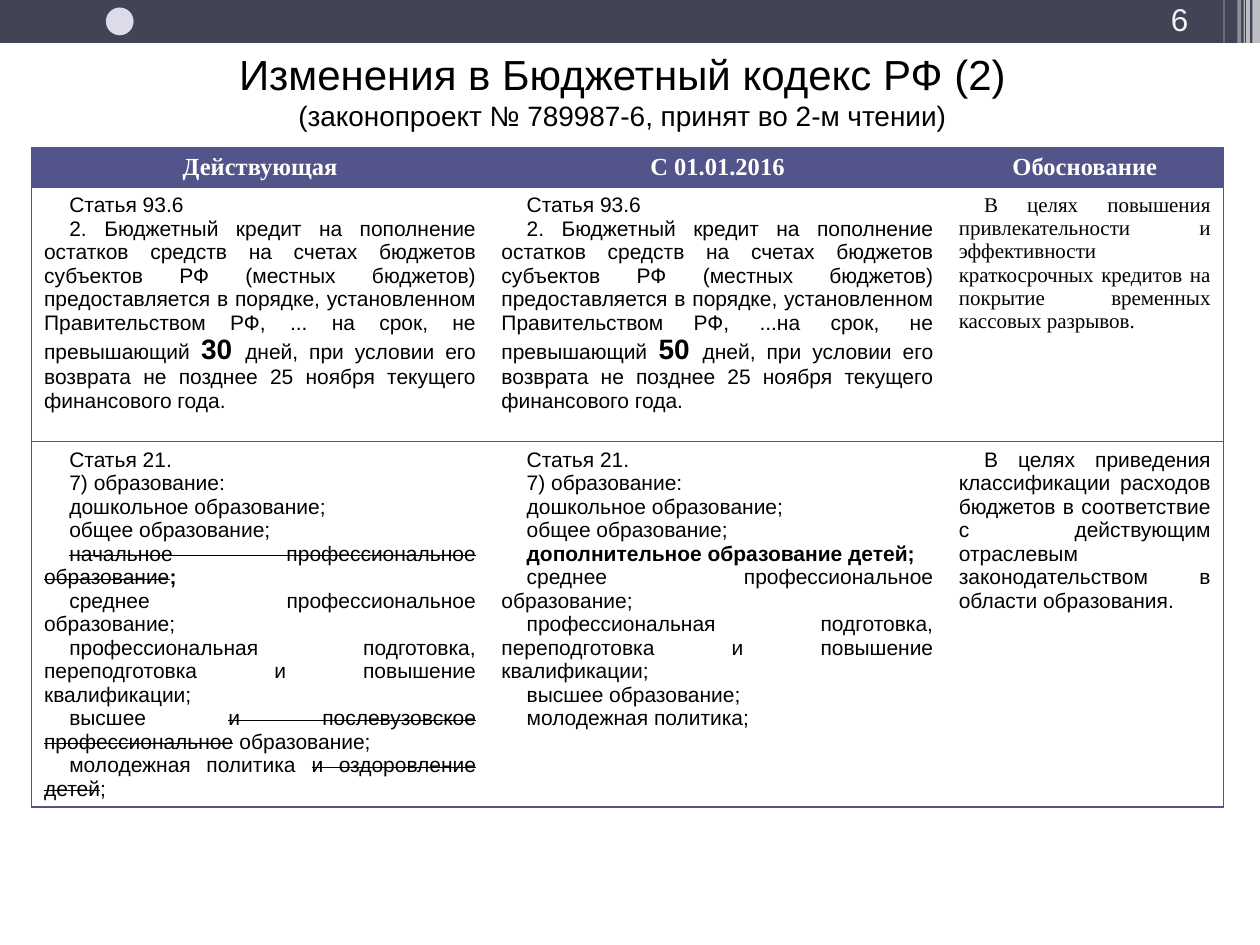
from lxml.etree import SubElement
from pptx import Presentation
from pptx.dml.color import RGBColor
from pptx.enum.shapes import MSO_SHAPE
from pptx.enum.text import MSO_ANCHOR, MSO_AUTO_SIZE, PP_ALIGN
from pptx.oxml import parse_xml
from pptx.oxml.ns import nsdecls, qn
from pptx.util import Inches, Pt

COLORS = {
    "band": "424456",
    "accent": "53548A",
    "emblem": "DBDBE9",
    "number": "F2F2F2",
    "white": "FFFFFF",
    "black": "000000",
}
SANS, SERIF = "Arial", "Times New Roman"
STRIPES = [
    (9.94, 0.06, 0.68, 65),
    (9.89, 0.03, 0.68, 65),
    (9.87, 0.01, 0.68, 60),
    (9.82, 0.03, 0.68, 40),
    (9.71, 0.01, 0.64, 30),
]
COLUMN_WIDTHS = [3.63, 3.63, 2.2]
ROW_HEIGHTS = [0.31, 2.02, 2.9]
HEADINGS = ["Действующая", "С 01.01.2016", "Обоснование"]

EDUCATION_START = [
    "Статья 21.",
    "7) образование:",
    "дошкольное образование;",
    "общее образование;",
]
EDUCATION_MIDDLE = [
    "среднее профессиональное образование;",
    "профессиональная подготовка, переподготовка и повышение квалификации;",
]
EDUCATION_NOW = EDUCATION_START + [
    [("начальное профессиональное образование", "strike"), (";", "bold")],
    *EDUCATION_MIDDLE,
    [("высшее ", ""), ("и послевузовское профессиональное", "strike"), (" образование;", "")],
    [("молодежная политика ", ""), ("и оздоровление детей", "strike"), (";", "")],
]
EDUCATION_NEXT = EDUCATION_START + [
    [("дополнительное образование детей;", "bold")],
    *EDUCATION_MIDDLE,
    "высшее образование;",
    "молодежная политика;",
]
CREDIT_REASON = [
    "В целях повышения привлекательности и эффективности краткосрочных "
    "кредитов на покрытие временных кассовых разрывов."
]
EDUCATION_REASON = [
    "В целях приведения классификации расходов бюджетов в соответствие с "
    "действующим отраслевым законодательством в области образования."
]


def credit_article(term, days):
    return [
        "Статья 93.6",
        [
            ("2. Бюджетный кредит на пополнение остатков средств на счетах бюджетов "
             "субъектов РФ (местных бюджетов) предоставляется в порядке, установленном "
             f"Правительством РФ, {term} срок, не превышающий ", ""),
            (f"{days} ", "large"),
            ("дней, при условии его возврата не позднее 25 ноября текущего "
             "финансового года.", ""),
        ],
    ]


def rgb(name):
    return RGBColor.from_string(COLORS[name])


def format_run(run, font_name, size, color, bold=False):
    run.font.name = font_name
    run.font.size = Pt(size)
    run.font.color.rgb = rgb(color)
    run.font.bold = bold


def add_block(slide, kind, left, top, width, height, color, opacity=100):
    block = slide.shapes.add_shape(
        kind, Inches(left), Inches(top), Inches(width), Inches(height))
    block.shadow.inherit = False
    block.line.fill.background()
    block.fill.solid()
    block.fill.fore_color.rgb = rgb(color)
    if opacity < 100:
        tint = block.fill._xPr.find(f".//{qn('a:srgbClr')}")
        SubElement(tint, qn("a:alpha")).set("val", str(opacity * 1000))


def add_header(slide):
    add_block(slide, MSO_SHAPE.RECTANGLE, 0, 0, 10, 0.34, "band")
    for left, width, height, opacity in STRIPES:
        add_block(slide, MSO_SHAPE.RECTANGLE, left, 0, width, height, "white", opacity)
    add_block(slide, MSO_SHAPE.OVAL, 0.84, 0.06, 0.22, 0.22, "emblem")


def add_title(slide):
    title = slide.shapes.title
    title.left, title.top = Inches(0.44), Inches(0.44)
    title.width, title.height = Inches(9), Inches(0.55)
    frame = title.text_frame
    frame.text = ("Изменения в Бюджетный кодекс РФ (2)\v"
                  "(законопроект № 789987-6, принят во 2-м чтении)")
    frame.word_wrap = True
    frame.auto_size = MSO_AUTO_SIZE.NONE
    frame.vertical_anchor = MSO_ANCHOR.MIDDLE
    heading = frame.paragraphs[0]
    heading.alignment = PP_ALIGN.CENTER
    for run, size in zip(heading.runs, (24, 16)):
        format_run(run, SANS, size, "black")


def add_page_number(slide):
    number = slide.shapes.add_textbox(
        Inches(8.74), Inches(0.02), Inches(0.79), Inches(0.33))
    frame = number.text_frame
    frame.text = "6"
    frame.word_wrap = True
    frame.vertical_anchor = MSO_ANCHOR.BOTTOM
    frame.paragraphs[0].alignment = PP_ALIGN.RIGHT
    format_run(frame.paragraphs[0].runs[0], SANS, 18, "number")


def set_borders(cell, visible_sides):
    properties = cell._tc.get_or_add_tcPr()
    for position, side in enumerate("LRTB"):
        paint = "<a:noFill/>"
        if side in visible_sides:
            paint = f'<a:solidFill><a:srgbClr val="{COLORS["accent"]}"/></a:solidFill>'
        properties.insert(position, parse_xml(
            f'<a:ln{side} {nsdecls("a")} w="{Pt(0.75)}">{paint}</a:ln{side}>'))


def fill_heading(cell, heading):
    cell.text_frame.text = heading
    paragraph = cell.text_frame.paragraphs[0]
    paragraph.alignment = PP_ALIGN.CENTER
    format_run(paragraph.runs[0], SERIF, 14, "white", bold=True)
    cell.fill.solid()
    cell.fill.fore_color.rgb = rgb("accent")


def fill_provisions(cell, provisions, font_name):
    cell.fill.background()
    frame = cell.text_frame
    for index, provision in enumerate(provisions):
        paragraph = frame.add_paragraph() if index else frame.paragraphs[0]
        paragraph.alignment = PP_ALIGN.JUSTIFY
        indents = paragraph._p.get_or_add_pPr()
        indents.set("marL", "0")
        indents.set("indent", str(Inches(0.2)))
        parts = [(provision, "")] if isinstance(provision, str) else provision
        for wording, style in parts:
            run = paragraph.add_run()
            run.text = wording
            size = 16 if style == "large" else 12
            format_run(run, font_name, size, "black", bold=style in ("bold", "large"))
            if style == "strike":
                run._r.get_or_add_rPr().set("strike", "sngStrike")


def add_comparison(slide):
    rows = [
        [credit_article("... на", 30), credit_article("...на", 50), CREDIT_REASON],
        [EDUCATION_NOW, EDUCATION_NEXT, EDUCATION_REASON],
    ]
    comparison = slide.shapes.add_table(
        len(ROW_HEIGHTS), len(COLUMN_WIDTHS), Inches(0.25), Inches(1.17),
        Inches(sum(COLUMN_WIDTHS)), Inches(sum(ROW_HEIGHTS))).table
    comparison.horz_banding = False
    for column, width in zip(comparison.columns, COLUMN_WIDTHS):
        column.width = Inches(width)
    for row, height in zip(comparison.rows, ROW_HEIGHTS):
        row.height = Inches(height)
    for column_index, heading in enumerate(HEADINGS):
        fill_heading(comparison.cell(0, column_index), heading)
        for row_index, row in enumerate(rows, start=1):
            serif_cell = row[column_index] is CREDIT_REASON
            fill_provisions(comparison.cell(row_index, column_index),
                            row[column_index], SERIF if serif_cell else SANS)
        outer_side = ("L", "", "R")[column_index]
        for row_index in range(len(ROW_HEIGHTS)):
            set_borders(comparison.cell(row_index, column_index), "TB" + outer_side)


def main():
    presentation = Presentation()
    presentation.slide_width, presentation.slide_height = Inches(10), Inches(7.5)
    slide = presentation.slides.add_slide(presentation.slide_layouts[5])
    add_header(slide)
    add_title(slide)
    add_comparison(slide)
    add_page_number(slide)
    presentation.save("out.pptx")


if __name__ == "__main__":
    main()
